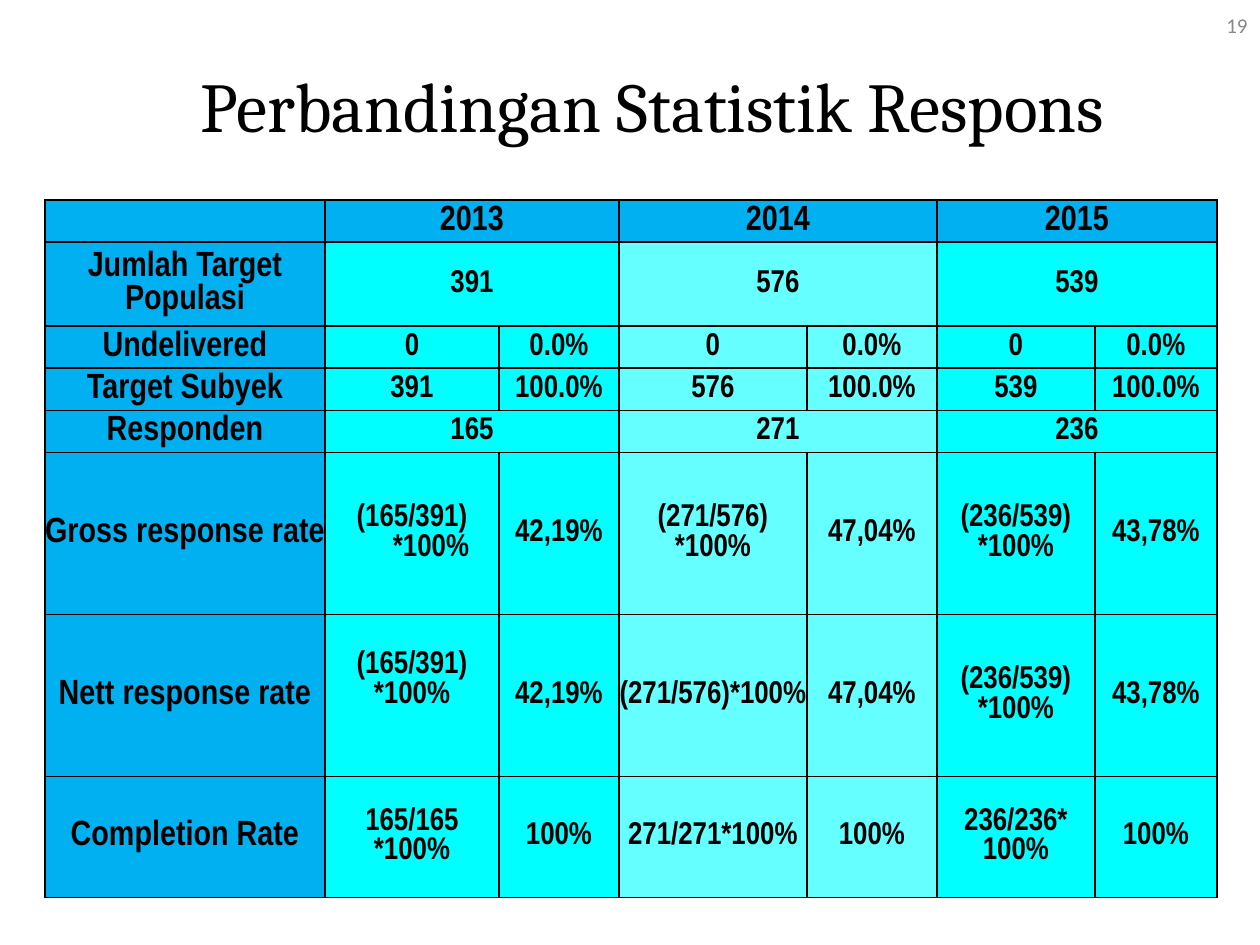
from dataclasses import dataclass

from lxml import etree
from pptx import Presentation
from pptx import util as u
from pptx.dml.color import RGBColor
from pptx.enum import text as t
from pptx.oxml.ns import qn

PX = 914400 // 126


@dataclass(frozen=True)
class Theme:
    ink: str = "000000"
    gray: str = "898989"
    head: str = "00B0F0"
    odd: str = "00FFFF"
    even: str = "66FFFF"
    title: int = 40
    label: int = 20
    value: int = 18
    page: int = 12


T = Theme()
TITLE = "Perbandingan Statistik Respons"
PAGE = "19"
YEARS = ["2013", "2014", "2015"]
# Label, then one entry per year: a single text spans both columns of the year.
ROWS = [
    ("Jumlah Target Populasi", "391", "576", "539"),
    ("Undelivered", ("0", "0.0%"), ("0", "0.0%"), ("0", "0.0%")),
    ("Target Subyek", ("391", "100.0%"), ("576", "100.0%"), ("539", "100.0%")),
    ("Responden", "165", "271", "236"),
    ("Gross response rate", ("(165/391) *100%", "42,19%"),
     ("(271/576) *100%", "47,04%"), ("(236/539) *100%", "43,78%")),
    ("Nett response rate", ("(165/391) *100%", "42,19%"),
     ("(271/576)*100%", "47,04%"), ("(236/539)\n*100%", "43,78%")),
    ("Completion Rate", ("165/165 *100%", "100%"),
     ("271/271*100%", "100%"), ("236/236* 100%", "100%")),
]
WIDTHS = [280, 174, 120, 188, 130, 158, 122]
HEIGHTS = [42, 84, 42, 42, 42, 162, 162, 121]
LEFT, TOP = 45, 200
HANG = 38
HANGING = [(1, 1), (1, 3), (1, 5), (5, 1)]  # cells with a hanging indent
RAISED = {(6, 1): 30}  # bottom margin that lifts the text


def write(frame, words, size, font="Arial Narrow", color=T.ink, bold=False,
          align=t.PP_ALIGN.CENTER, hang=0):
    frame.word_wrap = True
    for i, line in enumerate(words.split("\n")):
        para = frame.add_paragraph() if i else frame.paragraphs[0]
        para.alignment = align
        if hang:
            props = para._p.get_or_add_pPr()
            props.set("marL", str(hang * PX))
            props.set("indent", str(-hang * PX))
        run = para.add_run()
        run.text = line
        run.font.name, run.font.size, run.font.bold = font, u.Pt(size), bold
        run.font.color.rgb = RGBColor.from_string(color)


def label(slide, box, words, size, **style):
    frame = slide.shapes.add_textbox(*(n * PX for n in box)).text_frame
    frame.vertical_anchor = t.MSO_ANCHOR.MIDDLE
    write(frame, words, size, **style)


def dress(cell, fill, base=0):
    """Give a cell its margins, border lines and fill."""
    cell.margin_left = cell.margin_right = cell.margin_top = 0
    cell.margin_bottom = base * PX
    cell.vertical_anchor = t.MSO_ANCHOR.MIDDLE
    props = cell._tc.get_or_add_tcPr()
    for side in ("lnL", "lnR", "lnT", "lnB"):
        line = etree.SubElement(props, qn("a:" + side), w=str(u.Pt(1)))
        solid = etree.SubElement(line, qn("a:solidFill"))
        etree.SubElement(solid, qn("a:srgbClr"), val=T.ink)
    cell.fill.solid()
    cell.fill.fore_color.rgb = RGBColor.from_string(fill)


def build_table(slide):
    shape = slide.shapes.add_table(
        len(HEIGHTS), len(WIDTHS), LEFT * PX, TOP * PX,
        sum(WIDTHS) * PX, sum(HEIGHTS) * PX)
    table = shape.table
    table.horz_banding = False
    for col, wide in zip(table.columns, WIDTHS):
        col.width = wide * PX
    for row, high in zip(table.rows, HEIGHTS):
        row.height = high * PX

    for r, (name, *years) in enumerate([("", *YEARS), *ROWS]):
        for c in range(len(WIDTHS)):
            body = T.even if c in (3, 4) else T.odd
            fill = T.head if r == 0 or c == 0 else body
            dress(table.cell(r, c), fill, RAISED.get((r, c), 0))
        if name:
            write(table.cell(r, 0).text_frame, name, T.label, bold=True)
        for y, entry in enumerate(years):
            first = 1 + 2 * y
            if isinstance(entry, str):
                table.cell(r, first).merge(table.cell(r, first + 1))
                entry = (entry,)
            for c, words in enumerate(entry, first):
                write(table.cell(r, c).text_frame, words,
                      T.value if r else T.label, bold=True,
                      hang=HANG if (r, c) in HANGING else 0)


def main():
    deck = Presentation()
    deck.slide_width, deck.slide_height = 1260 * PX, 945 * PX
    slide = deck.slides.add_slide(deck.slide_layouts[6])
    label(slide, (126, 29, 1053, 151), TITLE, T.title, font="Cambria")
    label(slide, (1202, 0, 58, 50), PAGE, T.page, font="Calibri",
          color=T.gray, align=t.PP_ALIGN.RIGHT)
    build_table(slide)
    deck.save("out.pptx")


if __name__ == "__main__":
    main()
